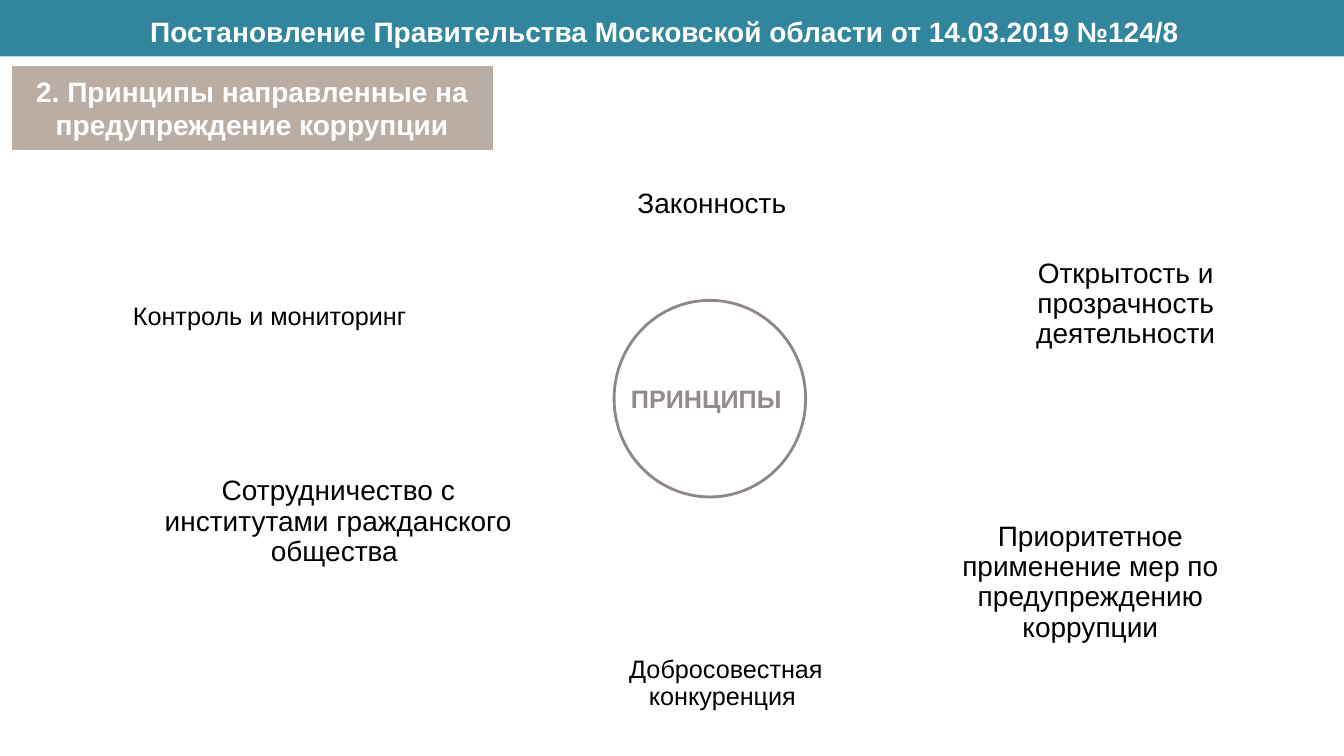
import pptx
import pptx.util
import pptx.dml.color
import pptx.enum.shapes
import pptx.enum.text

WIDE = pptx.util.Inches(13.33)
HIGH = pptx.util.Inches(7.5)
KIND = pptx.enum.shapes.MSO_SHAPE
SIDE = pptx.enum.text.PP_ALIGN
HOLD = pptx.enum.text.MSO_ANCHOR

IDEAS = [
    ("Законность ", (44.86, 19.87, 16.8, 14.27), 20, 3),
    ("Открытость и прозрачность деятельности", (75.32, 32.27, 16.88, 16), 20, 3),
    ("Сотрудничество с институтами гражданского общества ",
     (10.8, 60.67, 28.73, 16.8), 20, 3),
    ("Приоритетное применение мер по предупреждению коррупции",
     (70.14, 66.4, 21.98, 21.33), 20, 4.5),
    ("Контроль и мониторинг", (8.7, 35.47, 22.73, 12.93), 18, 5),
    ("Добросовестная конкуренция ", (45.69, 85.47, 16.65, 10), 18, 5),
]


def paint(code):
    return pptx.dml.color.RGBColor.from_string(code)


def place(area):
    left, top, width, height = area
    return [round(share * full / 100) for share, full in
            ((left, WIDE), (top, HIGH), (width, WIDE), (height, HIGH))]


def add_form(slide, kind, area, fill, line=None, thick=0.75):
    form = slide.shapes.add_shape(kind, *place(area))
    form.shadow.inherit = False
    form.fill.solid()
    form.fill.fore_color.rgb = paint(fill)
    if line:
        form.line.color.rgb = paint(line)
        form.line.width = pptx.util.Pt(thick)
    else:
        form.line.fill.background()
    return form


def add_label(slide, area):
    return slide.shapes.add_textbox(*place(area))


def write(form, text, size, tint, bold=False, inset=7.2, space=1.0,
          side=SIDE.CENTER, hold=HOLD.MIDDLE, wrap=True):
    frame = form.text_frame
    frame.text = text
    frame.word_wrap = wrap
    frame.vertical_anchor = hold
    frame.margin_left = frame.margin_right = pptx.util.Pt(inset)
    frame.margin_top = frame.margin_bottom = pptx.util.Pt(min(inset, 3.6))
    para = frame.paragraphs[0]
    para.alignment = side
    para.line_spacing = space
    font = para.runs[0].font
    font.name = "Arial"
    font.size = pptx.util.Pt(size)
    font.bold = bold
    font.color.rgb = paint(tint)


def add_head(slide):
    add_form(slide, KIND.RECTANGLE, (0, 0, 100, 7.47), "31859C")
    title = add_label(slide, (0, 2.27, 99.5, 4.53))
    write(title, "Постановление Правительства Московской области от 14.03.2019 №124/8 ",
          20, "FFFFFF", bold=True, space=0.75, hold=HOLD.TOP)
    topic = add_form(slide, KIND.RECTANGLE, (0.83, 8.67, 35.86, 11.2), "BAADA4", "FFFFFF")
    write(topic, "2. Принципы направленные на предупреждение коррупции",
          20, "FFFFFF", bold=True)


def add_idea(slide, text, area, size, inset):
    box = add_form(slide, KIND.RECTANGLE, area, "FFFFFF")
    write(box, text, size, "000000", inset=inset, space=0.9)


def add_core(slide):
    add_form(slide, KIND.OVAL, (45.69, 39.73, 14.25, 26), "FFFFFF", "8F8687", 2)
    label = add_label(slide, (46.21, 50, 12.83, 5.33))
    write(label, "ПРИНЦИПЫ", 18, "938A8B", bold=True,
          side=SIDE.LEFT, hold=HOLD.TOP, wrap=False)


def main():
    deck = pptx.Presentation()
    deck.slide_width = WIDE
    deck.slide_height = HIGH
    slide = deck.slides.add_slide(deck.slide_layouts[6])
    add_head(slide)
    for idea in IDEAS:
        add_idea(slide, *idea)
    add_core(slide)
    deck.save("out.pptx")


if __name__ == "__main__":
    main()
